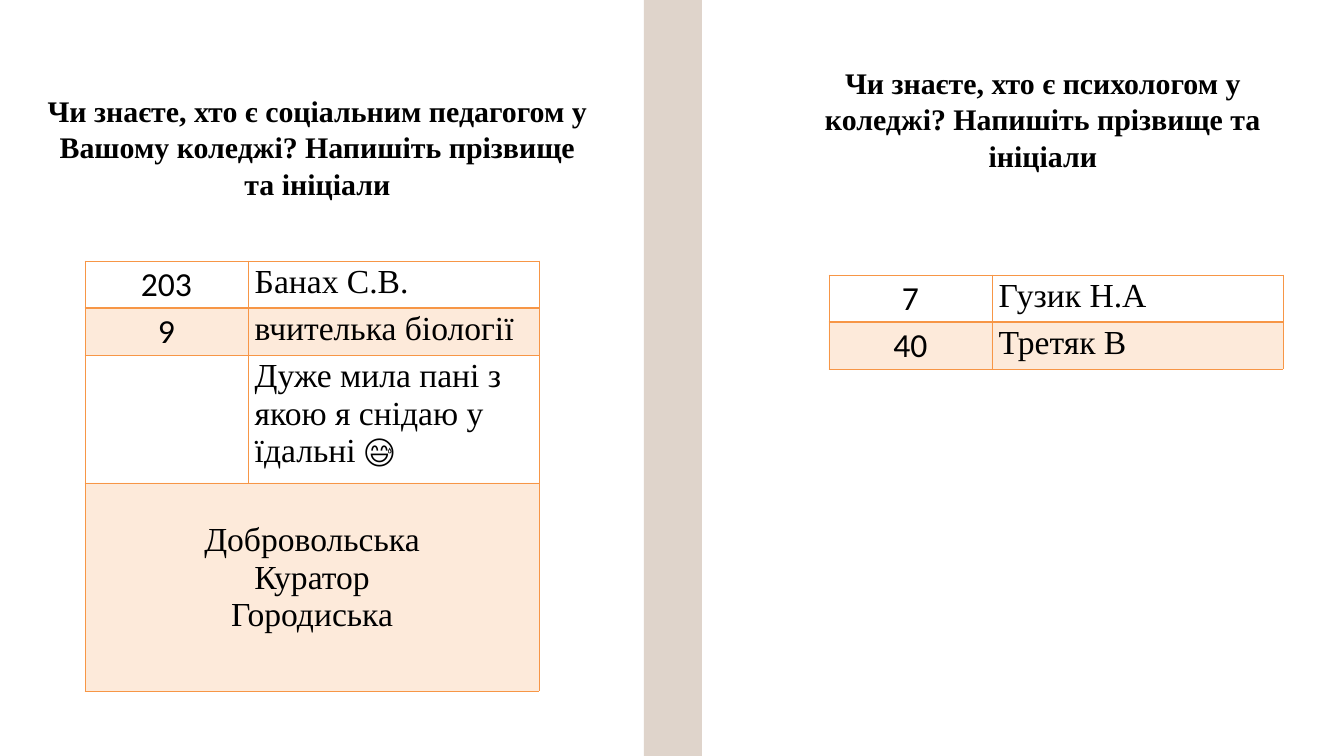
from lxml.etree import SubElement
from pptx import Presentation
from pptx.dml.color import RGBColor
from pptx.enum.shapes import MSO_SHAPE
from pptx.enum.text import PP_ALIGN
from pptx.oxml import parse_xml
from pptx.oxml.ns import nsdecls, qn
from pptx.util import Pt

EMU_PER_PX = 914400 / 67.2
PAGE_WIDTH, PAGE_HEIGHT = 1344, 756

WHITE = RGBColor(0xFF, 0xFF, 0xFF)
BLACK = RGBColor(0x00, 0x00, 0x00)
SAND = RGBColor(0xDF, 0xD4, 0xCB)
ORANGE = RGBColor(0xF7, 0x96, 0x46)

SERIF = "Times New Roman"
SANS = "Calibri"
COLUMN_WIDTHS = (163, 291)


def px(length):
    return round(length * EMU_PER_PX)


def px_box(box):
    return [px(length) for length in box]


def format_para(para, font_name, size, align, bold=False):
    para.alignment = align
    for span in para.runs:
        span.font.name = font_name
        span.font.size = Pt(size)
        span.font.bold = bold
        span.font.color.rgb = BLACK


def add_question(page, box, text):
    frame = page.shapes.add_textbox(*px_box(box)).text_frame
    frame.word_wrap = True
    frame.margin_left = frame.margin_right = 0
    frame.margin_top = frame.margin_bottom = 0
    frame.text = text
    para = frame.paragraphs[0]
    para.line_spacing = Pt(39)
    format_para(para, SERIF, 32, PP_ALIGN.CENTER, bold=True)


def add_divider(page, box):
    band = page.shapes.add_shape(MSO_SHAPE.RECTANGLE, *px_box(box))
    band.shadow.inherit = False
    band.fill.solid()
    band.fill.fore_color.rgb = SAND
    band.line.fill.background()


def style_cell(cell, shaded, bottom_width):
    cell.margin_top = cell.margin_bottom = px(3)
    properties = cell._tc.get_or_add_tcPr()
    if shaded:
        cell.fill.solid()
        cell.fill.fore_color.rgb = ORANGE
        color = properties.find(qn("a:solidFill"))[0]
        SubElement(color, qn("a:alpha"), val="20000")
    else:
        cell.fill.background()
    # Borders come before the fill, in the order left, right, top, bottom
    for index, side in enumerate("LRTB"):
        width = Pt(bottom_width if side == "B" else 1)
        properties.insert(index, parse_xml(
            f'<a:ln{side} {nsdecls("a")} w="{width}"><a:solidFill>'
            f'<a:srgbClr val="{ORANGE}"/></a:solidFill></a:ln{side}>'))


def add_answers(page, left, top, rows, row_heights):
    """Place a table of (count, answer) rows and return it."""
    box = (left, top, sum(COLUMN_WIDTHS), sum(row_heights))
    table = page.shapes.add_table(len(rows), 2, *px_box(box)).table
    table.first_row = table.horz_banding = False
    for column, width in zip(table.columns, COLUMN_WIDTHS):
        column.width = px(width)
    for row_index, (row, height) in enumerate(zip(rows, row_heights)):
        table.rows[row_index].height = px(height)
        for column_index, text in enumerate(row):
            cell = table.cell(row_index, column_index)
            style_cell(cell, row_index % 2 == 1, 2 if row_index == 0 else 1)
            cell.text = text
            is_count = column_index == 0
            format_para(cell.text_frame.paragraphs[0],
                        SANS if is_count else SERIF, 36,
                        PP_ALIGN.CENTER if is_count else PP_ALIGN.LEFT)
    return table


def add_other_names(table, names):
    """Merge the last row into one cell that lists the names."""
    last = len(table.rows) - 1
    cell = table.cell(last, 0)
    cell.merge(table.cell(last, 1))
    cell.margin_top = px(39)
    cell.text = "\n".join(names)
    for para in cell.text_frame.paragraphs:
        format_para(para, SERIF, 36, PP_ALIGN.CENTER)


def main():
    deck = Presentation()
    deck.slide_width, deck.slide_height = px(PAGE_WIDTH), px(PAGE_HEIGHT)
    page = deck.slides.add_slide(deck.slide_layouts[6])
    page.background.fill.solid()
    page.background.fill.fore_color.rgb = WHITE

    # Questions and the band between them
    add_question(page, (821, 64, 444, 109),
                 "Чи знаєте, хто є психологом у коледжі? "
                 "Напишіть прізвище та ініціали")
    add_question(page, (43, 92, 549, 109),
                 "Чи знаєте, хто є соціальним педагогом у Вашому коледжі? "
                 "Напишіть прізвище та ініціали")
    add_divider(page, (644, 0, 58, PAGE_HEIGHT))

    # Answers about the psychologist
    add_answers(page, 829, 275,
                [("7", "Гузик Н.А"), ("40", "Третяк В")], (47, 47))

    # Answers about the social educator
    educator = add_answers(
        page, 85, 261,
        [("203", "Банах С.В."), ("9", "вчителька біології"),
         ("", "Дуже мила пані з якою я снідаю у їдальні 😅"), ("", "")],
        (47, 47, 128, 208))
    add_other_names(educator, ("Добровольська", "Куратор", "Городиська"))

    deck.save("out.pptx")


if __name__ == "__main__":
    main()
